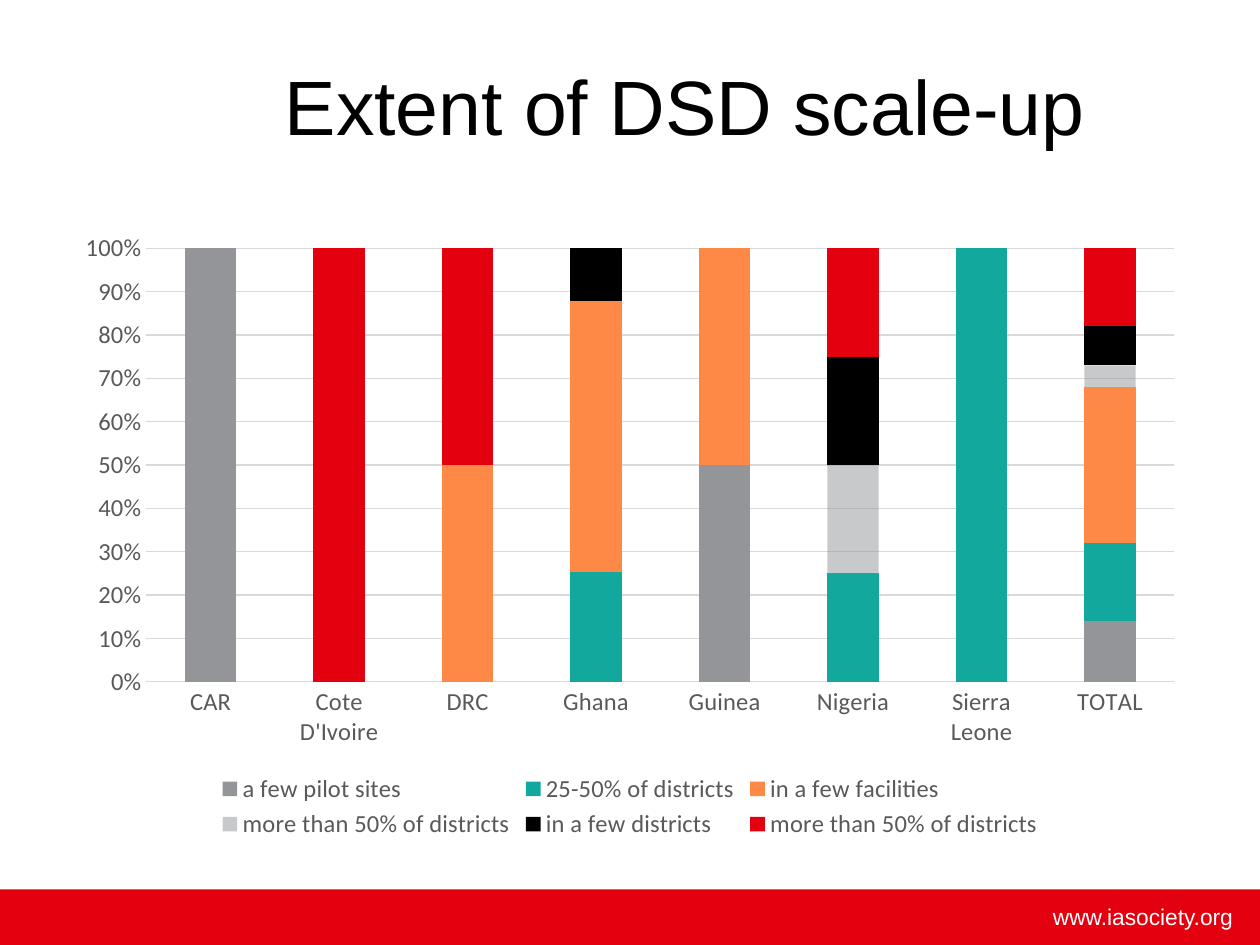
from lxml.etree import SubElement
from pptx import Presentation
from pptx.chart.data import CategoryChartData as ChartData
from pptx.dml.color import RGBColor as RGB
from pptx.enum.chart import XL_CHART_TYPE as Kind, XL_LEGEND_POSITION as Pos, XL_TICK_MARK as Tick
from pptx.enum.shapes import MSO_SHAPE as Shape
from pptx.enum.text import MSO_ANCHOR as Anchor, PP_ALIGN as Align
from pptx.oxml.ns import qn
from pptx.util import Cm, Pt

# Content
TITLE = "Extent of DSD scale-up"
SITE = "www.iasociety.org"
LANDS = ["CAR", "Cote D'Ivoire", "DRC", "Ghana", "Guinea", "Nigeria", "Sierra Leone", "TOTAL"]
NA = None
SERIES = [  # name, colour, opacity in percent, values
    ("a few pilot sites", "gray", 100, [100, NA, NA, NA, 50, NA, NA, 14]),
    ("25-50% of districts", "teal", 100, [NA, NA, NA, 25, NA, 25, 100, 18]),
    ("in a few facilities", "orange", 100, [NA, NA, 50, 62, 50, NA, NA, 36]),
    ("more than 50% of districts", "gray", 50, [NA, NA, NA, NA, NA, 25, NA, 5]),
    ("in a few districts", "black", 100, [NA, NA, NA, 12, NA, 25, NA, 9]),
    ("more than 50% of districts", "red", 100, [NA, 100, 50, NA, NA, 25, NA, 18]),
]
COLORS = {
    "gray": "939598", "teal": "13A89E", "orange": "FE8946", "black": "000000",
    "red": "E3000F", "white": "FFFFFF", "label": "595959", "rule": "D9D9D9",
}


def color(name):
    return RGB.from_string(COLORS[name])


def style(font, size, tint, face="Calibri"):
    font.size, font.name, font.bold = Pt(size), face, False
    font.color.rgb = color(tint)


def paint(fill, tint, alpha=100):
    fill.solid()
    fill.fore_color.rgb = color(tint)


def add_text(slide, text, box, size=18, tint="black", align=Align.CENTER):
    frame = slide.shapes.add_textbox(*map(Cm, box)).text_frame
    frame.word_wrap = True
    frame.vertical_anchor = Anchor.MIDDLE
    para = frame.paragraphs[0]
    para.text, para.alignment = text, align
    style(para.font, size, tint, "Arial")


def add_bars(slide, box):
    data = ChartData(number_format="0")
    data.categories = LANDS
    for name, _, _, vals in SERIES:
        data.add_series(name, vals)
    chart = slide.shapes.add_chart(Kind.COLUMN_STACKED_100, *map(Cm, box), data).chart
    chart.has_title = False
    style(chart.font, 10, "black")

    # Bars
    plot = chart.plots[0]
    plot.gap_width, plot.overlap, plot.vary_by_categories = 150, 100, False
    for bar, (_, tint, alpha, _) in zip(plot.series, SERIES):
        bar.invert_if_negative = False
        paint(bar.format.fill, tint)
        if alpha < 100:
            node = next(bar.format.fill._xPr.iter(qn("a:srgbClr")))
            SubElement(node, qn("a:alpha"), val=str(alpha * 1000))

    # Axes
    cat, val = chart.category_axis, chart.value_axis
    for axis in (cat, val):
        axis.major_tick_mark = axis.minor_tick_mark = Tick.NONE
        style(axis.tick_labels.font, 14, "label")
    val.has_major_gridlines = True
    for line in (cat.format.line, val.major_gridlines.format.line):
        line.width = Pt(0.75)
        line.color.rgb = color("rule")
    val.format.line.fill.background()
    val.tick_labels.number_format = "0%"
    val.tick_labels.number_format_is_linked = False

    # Legend
    chart.has_legend = True
    chart.legend.position = Pos.BOTTOM
    chart.legend.include_in_layout = False
    style(chart.legend.font, 14, "label")


def main():
    deck = Presentation()
    deck.slide_width, deck.slide_height = Cm(25.4), Cm(19.05)
    slide = deck.slides.add_slide(deck.slide_layouts[6])

    # Footer band
    band = slide.shapes.add_shape(Shape.RECTANGLE, 0, Cm(17.93), Cm(25.4), Cm(1.12))
    band.shadow.inherit = False
    paint(band.fill, "red")
    band.line.fill.background()
    add_text(slide, SITE, (16.69, 18.06, 8.41, 0.81), size=13, tint="white", align=Align.RIGHT)

    # Title and chart
    add_text(slide, TITLE, (3.5, 0.53, 20.63, 3.18), size=44)
    add_bars(slide, (1.27, 4.45, 22.86, 12.57))
    deck.save("out.pptx")


if __name__ == "__main__":
    main()
